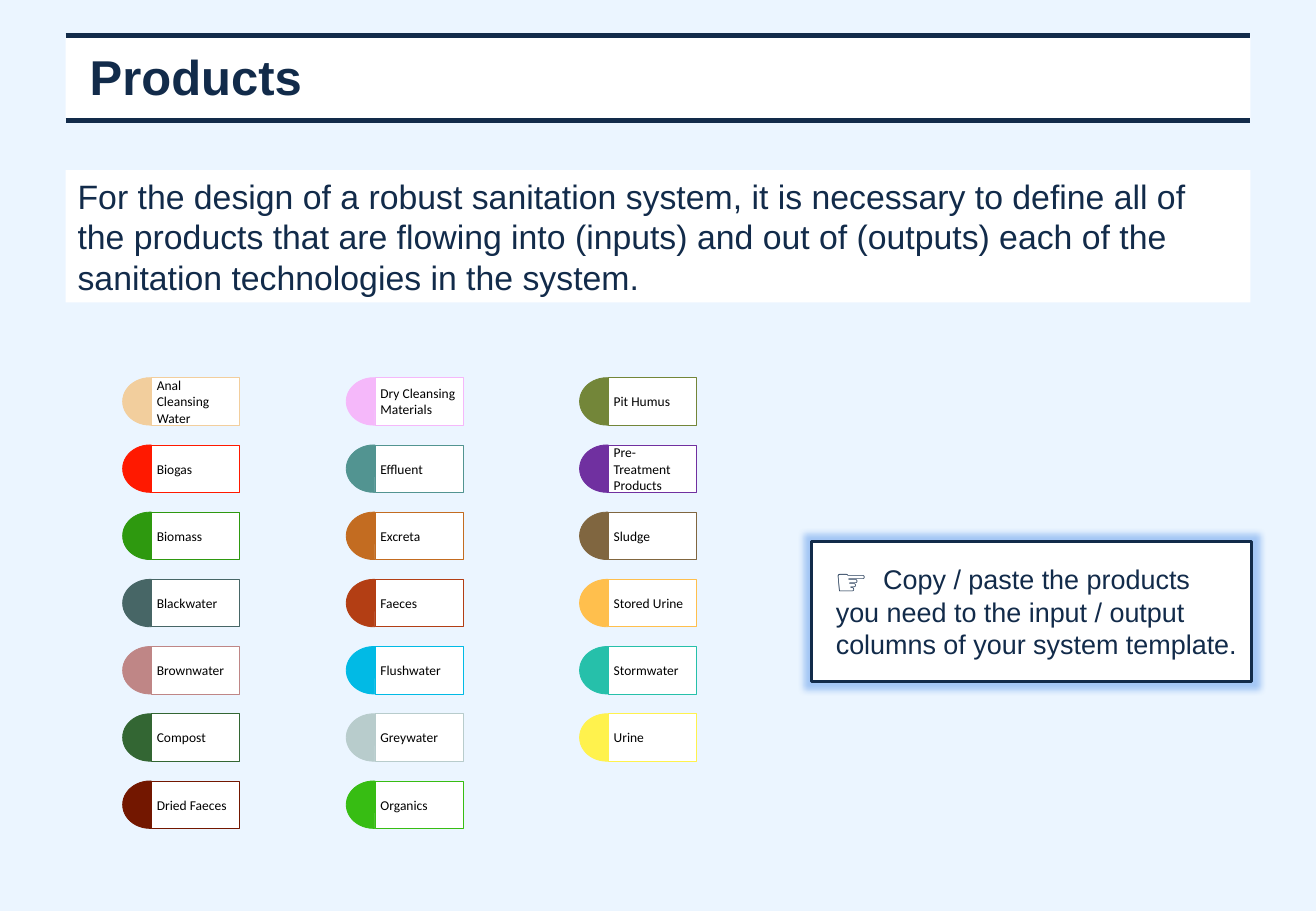
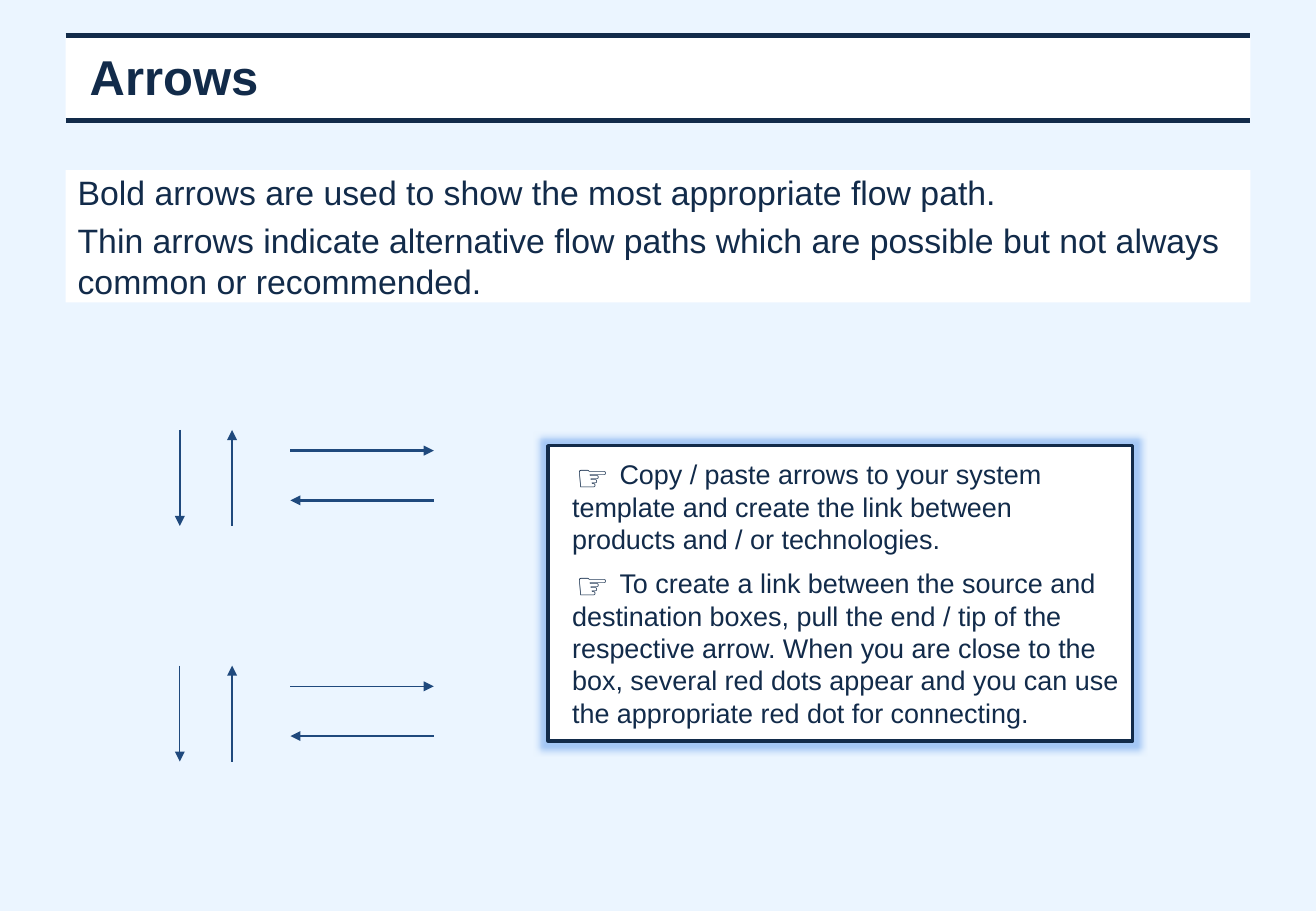
from lxml import etree
from pptx import Presentation
from pptx.dml.color import RGBColor
from pptx.enum.shapes import MSO_CONNECTOR as CONNECTOR, MSO_SHAPE as SHAPE
from pptx.enum.text import MSO_ANCHOR as ANCHOR, MSO_AUTO_SIZE as AUTO_SIZE, PP_ALIGN as ALIGN
from pptx.oxml.ns import qn
from pptx.util import Inches, Pt

COLORS = {
    "background": "EBF5FF",
    "panel": "FFFFFF",
    "navy": "122B4A",
    "arrow": "1F497D",
    "glow": "3A82E6",
    "label": "000000",
}
LEFT, WIDTH = 0.54, 9.75
CHIP_HEIGHT = 0.39
# Product columns: left edge, then name and colour from top to bottom
PRODUCT_COLUMNS = [
    (1.01, [("Anal Cleansing Water", "F2CE9D"), ("Biogas", "FF1900"),
            ("Biomass", "2E990F"), ("Blackwater", "476666"),
            ("Brownwater", "BF8686"), ("Compost", "336633"),
            ("Dried Faeces", "731700")]),
    (2.85, [("Dry Cleansing Materials", "F5B8FA"), ("Effluent", "529491"),
            ("Excreta", "C36C21"), ("Faeces", "B33E14"),
            ("Flushwater", "01BAE5"), ("Greywater", "B8CCCC"),
            ("Organics", "37BD13")]),
    (4.77, [("Pit Humus", "738639"), ("Pre-Treatment Products", "7030A0"),
            ("Sludge", "806640"), ("Stored Urine", "FFBF4D"),
            ("Stormwater", "26C0AA"), ("Urine", "FFF24D")]),
]


def rgb(value):
    return RGBColor.from_string(value)


def add_box(shapes, kind, box, fill, line=None, line_width=0.5):
    shape = shapes.add_shape(kind, *map(Inches, box))
    shape.shadow.inherit = False
    shape.fill.solid()
    shape.fill.fore_color.rgb = rgb(fill)
    if line:
        shape.line.color.rgb = rgb(line)
        shape.line.width = Pt(line_width)
    else:
        shape.line.fill.background()
    return shape


def write(shape, lines, size, color=COLORS["navy"], font="Arial", bold=False,
          margins=(0.1, 0.05, 0.1, 0.05), anchor=ANCHOR.MIDDLE, indent=None):
    """Fill a shape with left-aligned paragraphs; indent is (left margin, first line)."""
    frame = shape.text_frame
    frame.word_wrap = True
    frame.vertical_anchor = anchor
    (frame.margin_left, frame.margin_top,
     frame.margin_right, frame.margin_bottom) = map(Inches, margins)
    frame.text = "\n".join(lines)
    for paragraph in frame.paragraphs:
        paragraph.alignment = ALIGN.LEFT
        if indent:
            properties = paragraph._p.get_or_add_pPr()
            properties.set("marL", str(Inches(indent[0])))
            properties.set("indent", str(Inches(indent[1])))
        for run in paragraph.runs:
            run.font.size = Pt(size)
            run.font.name = font
            run.font.bold = bold
            run.font.color.rgb = rgb(color)
    return frame


def add_line(slide, start, end, color, width, arrow=False):
    line = slide.shapes.add_connector(
        CONNECTOR.STRAIGHT, *map(Inches, (*start, *end)))
    line.line.color.rgb = rgb(color)
    line.line.width = Pt(width)
    if arrow:
        etree.SubElement(line.line._get_or_add_ln(), qn("a:tailEnd"), type="triangle")
    etree.SubElement(line._element.spPr, qn("a:effectLst"))


def add_glow(shape):
    effects = shape._element.spPr.find(qn("a:effectLst"))
    glow = etree.SubElement(effects, qn("a:glow"), rad=str(Pt(8)))
    color = etree.SubElement(glow, qn("a:srgbClr"), val=COLORS["glow"])
    etree.SubElement(color, qn("a:alpha"), val="40000")


def add_title(slide, title, top=0.3, height=0.69):
    band = add_box(slide.shapes, SHAPE.RECTANGLE, (LEFT, top, WIDTH, height),
                   COLORS["panel"])
    write(band, [title], 29, bold=True, margins=(0.1, 0, 0.1, 0.04), indent=(0.1, 0))
    for y in (top - 0.01, top + height):
        add_line(slide, (LEFT, y), (LEFT + WIDTH, y), COLORS["navy"], 3)


def add_intro(slide, lines):
    panel = add_box(slide.shapes, SHAPE.RECTANGLE, (LEFT, 1.4, WIDTH, 1.09),
                    COLORS["panel"])
    for paragraph in write(panel, lines, 20).paragraphs:
        paragraph.space_before = Pt(4.5)


def add_callout(slide, box, lines, hands):
    """Glowing hint box; hands are pointer offsets from its top left corner."""
    callout = add_box(slide.shapes, SHAPE.FLOWCHART_PROCESS, box,
                      COLORS["panel"], COLORS["navy"], 2)
    add_glow(callout)
    frame = write(callout, lines, 16, indent=(0.1, 0.39))
    for paragraph in frame.paragraphs[1:]:
        paragraph.space_before = Pt(7)
    for x, y in hands:
        hand = slide.shapes.add_textbox(*map(Inches, (box[0] + x, box[1] + y, 0.49, 0.47)))
        hand_frame = write(hand, ["☞"], 22, bold=True, anchor=ANCHOR.TOP)
        hand_frame.word_wrap = False
        hand_frame.auto_size = AUTO_SIZE.SHAPE_TO_FIT_TEXT


def add_product(slide, left, top, name, color):
    shapes = slide.shapes.add_group_shape().shapes
    label = add_box(shapes, SHAPE.RECTANGLE, (left + 0.24, top, 0.72, CHIP_HEIGHT),
                    COLORS["panel"], color)
    write(label, [name], 8, COLORS["label"], "Calibri", margins=(0.04, 0.05, 0.04, 0.05))
    cap = add_box(shapes, SHAPE.CHORD, (left, top, 0.45, CHIP_HEIGHT), color, color)
    cap.adjustments[0] = 52.44
    cap.adjustments[1] = 163.87


def add_product_grid(slide, top, bottom):
    """Spread the rows evenly, the first at top and the seventh at bottom."""
    pitch = (bottom - top) / 6
    for left, products in PRODUCT_COLUMNS:
        for row, (name, color) in enumerate(products):
            add_product(slide, left, top + row * pitch, name, color)


def add_arrow_set(slide, left, top, width):
    """Arrows down, up, right and left."""
    arrows = [
        ((0, 0), (0, 0.79)),
        ((0.43, 0.79), (0.43, 0)),
        ((0.91, 0.17), (2.09, 0.17)),
        ((2.09, 0.58), (0.91, 0.58)),
    ]
    for ends in arrows:
        start, end = ((left + x, top + y) for x, y in ends)
        add_line(slide, start, end, COLORS["arrow"], width, arrow=True)


def add_base_slide(presentation, title, intro):
    slide = presentation.slides.add_slide(presentation.slide_layouts[6])
    slide.background.fill.solid()
    slide.background.fill.fore_color.rgb = rgb(COLORS["background"])
    add_title(slide, title)
    add_intro(slide, intro)
    return slide


def build_products(presentation):
    slide = add_base_slide(presentation, "Products", [
        "For the design of a robust sanitation system, it is necessary to define all of "
        "the products that are flowing into (inputs) and out of (outputs) each of the "
        "sanitation technologies in the system."])
    add_product_grid(slide, 3.11, 6.43)
    add_callout(slide, (6.68, 4.46, 3.62, 1.15), [
        "Copy / paste the products you need to the input / output columns of your "
        "system template."], [(0.09, 0.09)])


def build_arrows(presentation):
    slide = add_base_slide(presentation, "Arrows", [
        "Bold arrows are used to show the most appropriate flow path.",
        "Thin arrows indicate alternative flow paths which are possible but not always "
        "common or recommended."])
    add_arrow_set(slide, 1.48, 3.54, 1.5)
    add_arrow_set(slide, 1.48, 5.48, 0.75)
    add_callout(slide, (4.51, 3.67, 4.81, 2.43), [
        "Copy / paste arrows to your system template and create the link between "
        "products and / or technologies.",
        "To create a link between the source and destination boxes, pull the end / tip "
        "of the respective arrow. When you are close to the box, several red dots appear "
        "and you can use the appropriate red dot for connecting."],
        [(0.13, 0.02), (0.13, 0.91)])


def main():
    presentation = Presentation()
    presentation.slide_width = Inches(10.83)
    presentation.slide_height = Inches(7.5)
    build_products(presentation)
    build_arrows(presentation)
    presentation.save("out.pptx")


if __name__ == "__main__":
    main()
